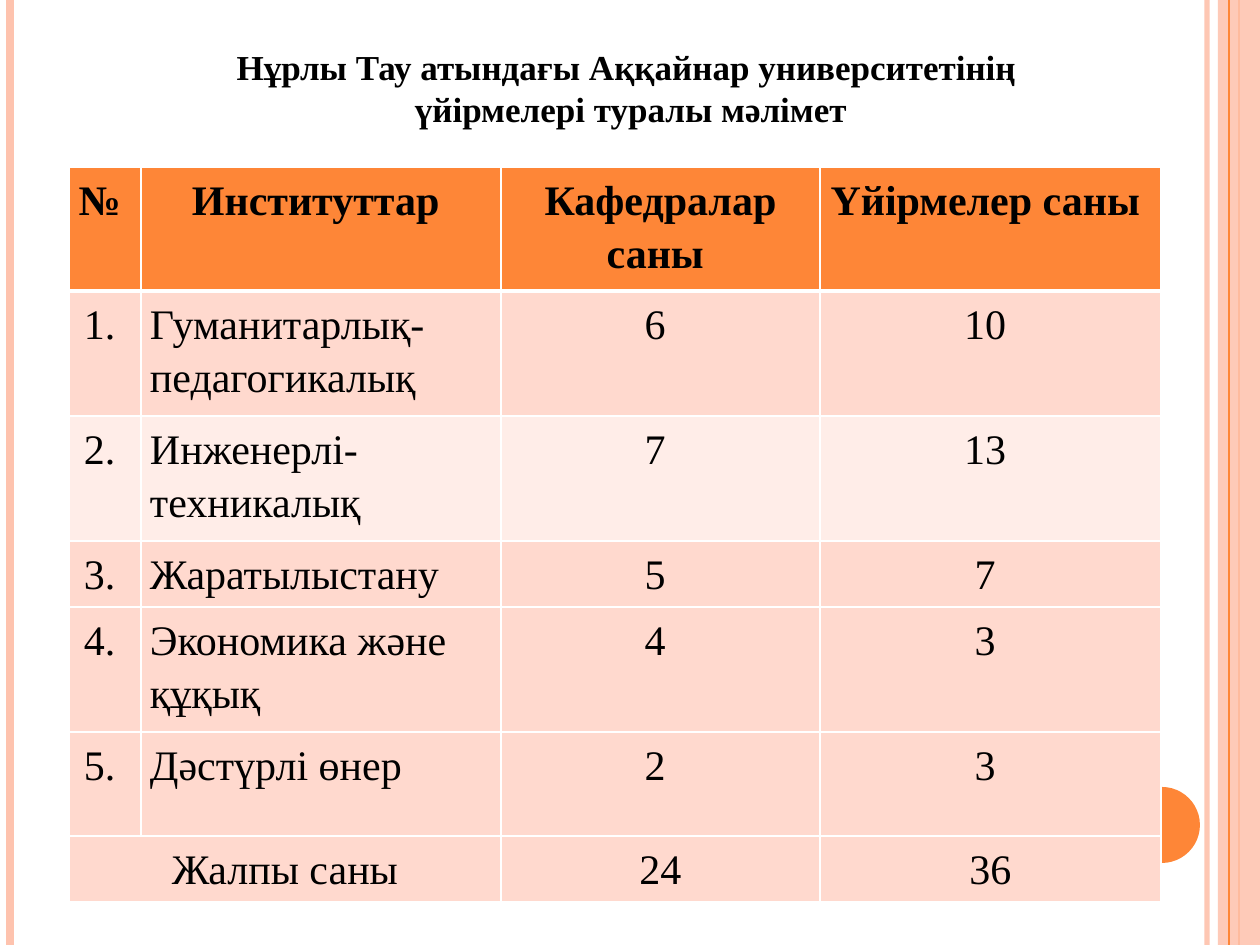
from lxml import etree
from pptx import Presentation
from pptx.dml.color import RGBColor
from pptx.enum.shapes import MSO_CONNECTOR, MSO_SHAPE
from pptx.enum.text import MSO_AUTO_SIZE, PP_ALIGN
from pptx.oxml.ns import qn
from pptx.util import Emu, Pt

LINE = MSO_CONNECTOR.STRAIGHT
RECT, OVAL = MSO_SHAPE.RECTANGLE, MSO_SHAPE.OVAL
LEFT, CENTER = PP_ALIGN.LEFT, PP_ALIGN.CENTER
GROW = MSO_AUTO_SIZE.SHAPE_TO_FIT_TEXT

WIDTH, HEIGHT = 1260, 945
FONT = "Times New Roman"
ORANGE, PEACH, WHITE, BLACK = "FE8637", "FEC3AE", "FFFFFF", "000000"
BAND, LIGHT_BAND = "FFD9CE", "FFEDE8"

TITLE = ["Нұрлы Тау атындағы Аққайнар университетінің ", "үйірмелері туралы мәлімет"]
COLUMNS = [72, 360, 319, 341]
ROWS = [
    (124, ORANGE, ["№ ", "Институттар ", "Кафедралар саны ", "Үйірмелер саны "]),
    (125, BAND, ["1. ", "Гуманитарлық-педагогикалық", "6 ", "10 "]),
    (125, LIGHT_BAND, ["2. ", "Инженерлі-техникалық", "7 ", "13 "]),
    (66, BAND, ["3. ", "Жаратылыстану", "5 ", "7 "]),
    (125, BAND, ["4. ", "Экономика және құқық", "4 ", "3 "]),
    (104, BAND, ["5. ", "Дәстүрлі өнер", "2 ", "3 "]),
    (66, BAND, ["Жалпы саны", "", "24", "36"]),
]


def px(n):
    """Convert pixels to EMU."""
    return Emu(round(n * 914400 / 126))


def rgb(color):
    """Turn a hex string into a colour."""
    return RGBColor.from_string(color)


def set_opacity(s, percent):
    """Make the only colour of a shape partly transparent."""
    clr = next(s._element.spPr.iter(qn("a:srgbClr")))
    etree.SubElement(clr, qn("a:alpha"), val=str(percent * 1000))


def add_stripe(slide, x, color, weight):
    """Draw a vertical line over the full slide height."""
    s = slide.shapes.add_connector(LINE, px(x), 0, px(x), px(HEIGHT))
    s.line.color.rgb = rgb(color)
    s.line.width = Pt(weight)
    etree.SubElement(s._element.spPr, qn("a:effectLst"))
    return s


def add_block(slide, kind, x, y, w, h, color):
    """Draw a filled shape without outline."""
    s = slide.shapes.add_shape(kind, px(x), px(y), px(w), px(h))
    s.shadow.inherit = False
    s.fill.solid()
    s.fill.fore_color.rgb = rgb(color)
    s.line.fill.background()
    return s


def format_paragraph(p, size, bold, align):
    """Set alignment and font of a paragraph."""
    p.alignment = align
    for r in p.runs:
        r.font.name = FONT
        r.font.size = Pt(size)
        r.font.bold = bold
        r.font.color.rgb = rgb(BLACK)


def add_title(slide, lines, x, y, w, h):
    """Add the centred bold title."""
    tf = slide.shapes.add_textbox(px(x), px(y), px(w), px(h)).text_frame
    tf.word_wrap = True
    tf.auto_size = GROW
    tf.text = "\n".join(lines)
    for p in tf.paragraphs:
        format_paragraph(p, 20, True, CENTER)


def set_borders(cell, top, bottom):
    """Give a cell white borders of the given top and bottom widths."""
    tc_pr = cell._tc.get_or_add_tcPr()
    for side, weight in (("L", 1), ("R", 1), ("T", top), ("B", bottom)):
        ln = etree.SubElement(tc_pr, qn(f"a:ln{side}"), w=str(Pt(weight)))
        fill = etree.SubElement(ln, qn("a:solidFill"))
        etree.SubElement(fill, qn("a:srgbClr"), val=WHITE)


def fill_cell(cell, text, color, bold, align):
    """Set fill, margins and text of a cell."""
    cell.fill.solid()
    cell.fill.fore_color.rgb = rgb(color)
    cell.margin_left = cell.margin_right = px(9)
    cell.margin_top = cell.margin_bottom = px(4)
    p = cell.text_frame.paragraphs[0]
    p.text = text
    p.line_spacing = 1.15
    p.space_after = Pt(10)
    format_paragraph(p, 24, bold, align)


def add_clubs_table(slide, x, y):
    """Add the table of institutes, departments and clubs."""
    height = sum(row[0] for row in ROWS)
    table = slide.shapes.add_table(len(ROWS), len(COLUMNS), px(x), px(y),
                                   px(sum(COLUMNS)), px(height)).table
    table.horz_banding = False
    for column, width in zip(table.columns, COLUMNS):
        column.width = px(width)
    last = len(ROWS) - 1
    for i, (row_height, color, texts) in enumerate(ROWS):
        table.rows[i].height = px(row_height)
        for j, text in enumerate(texts):
            cell = table.cell(i, j)
            align = LEFT if j == 1 and 0 < i < last else CENTER
            set_borders(cell, 3 if i == 1 else 1, 3 if i == 0 else 1)
            fill_cell(cell, text, color, i == 0, align)
    table.cell(last, 0).merge(table.cell(last, 1))


def main():
    """Build and save the slide."""
    prs = Presentation()
    prs.slide_width, prs.slide_height = px(WIDTH), px(HEIGHT)
    slide = prs.slides.add_slide(prs.slide_layouts[6])
    set_opacity(add_stripe(slide, 1207, PEACH, 3), 93)
    add_stripe(slide, 10, PEACH, 4.5)
    add_stripe(slide, 1239, ORANGE, 1.5)
    set_opacity(add_block(slide, RECT, 1218, 0, 42, HEIGHT, PEACH), 87)
    add_stripe(slide, 1229, ORANGE, 0.75)
    add_block(slide, OVAL, 1124, 787, 76, 76, ORANGE)
    add_title(slide, TITLE, 178, 39, 906, 97)
    add_clubs_table(slide, 69, 167)
    prs.save("out.pptx")


if __name__ == "__main__":
    main()
